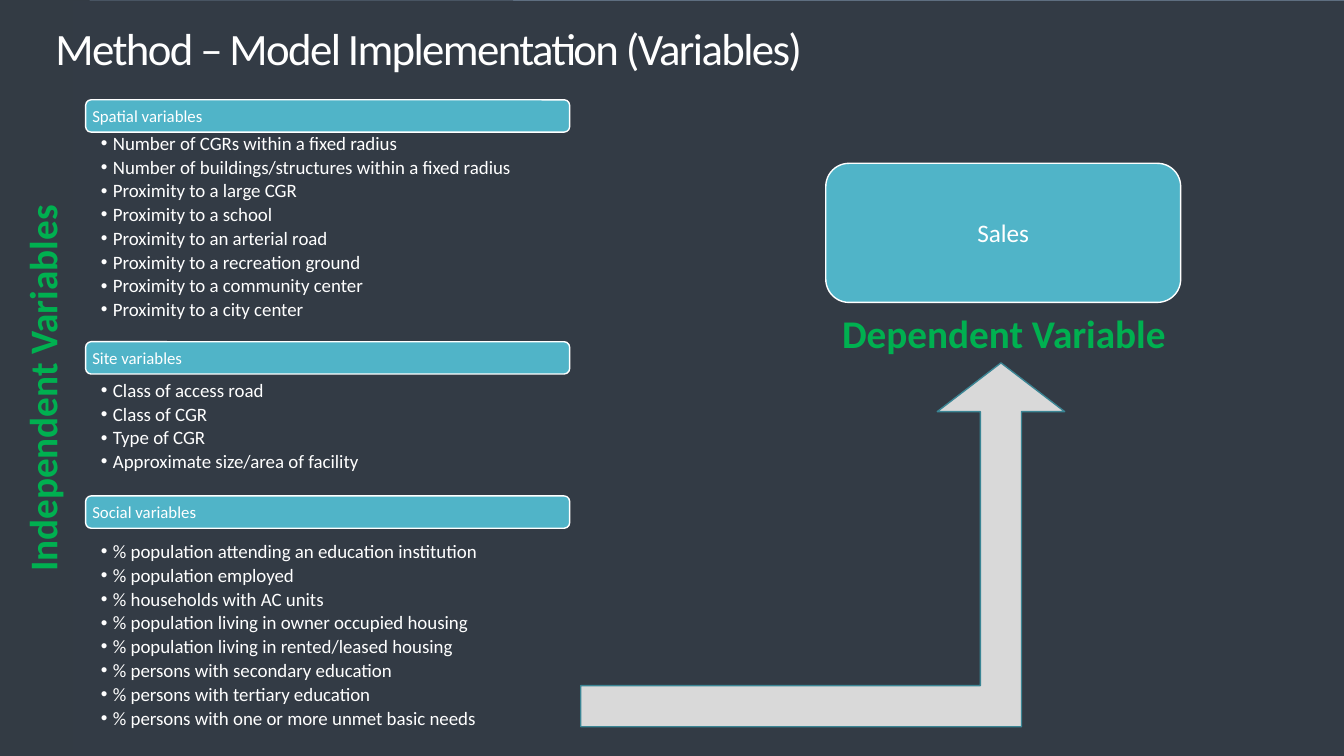
from lxml import etree
from pptx import Presentation
from pptx.dml.color import RGBColor
from pptx.enum import shapes, text
from pptx.oxml.ns import qn
from pptx.util import Inches, Pt

COLORS = {
    "base": "454545", "slate": "657689", "steel": "4C5867",
    "edge": "333B44", "panel": "333B45", "teal": "50B4C8",
    "teal_dark": "3B8594", "green": "00B050", "gray": "D9D9D9", "white": "FFFFFF",
}


def add_box(kind, box, fill, line=None):
    shape = slide.shapes.add_shape(kind, *map(Inches, box))
    shape.shadow.inherit = False
    shape.fill.solid()
    shape.fill.fore_color.rgb = RGBColor.from_string(COLORS[fill])
    if line:
        shape.line.color.rgb = RGBColor.from_string(COLORS[line])
        shape.line.width = Pt(1)
    else:
        shape.line.fill.background()
    return shape


def add_run(paragraph, words, size, color="white", bold=False):
    run = paragraph.add_run()
    run.text = words
    run.font.name = "Calibri"
    run.font.size = Pt(size)
    run.font.bold = bold
    run.font.color.rgb = RGBColor.from_string(COLORS[color])
    return run


prs = Presentation()
prs.slide_width, prs.slide_height = Inches(13.33), Inches(7.5)
slide = prs.slides.add_slide(prs.slide_layouts[4])
title, *lists, spare = slide.placeholders
spare.element.getparent().remove(spare.element)

# Backdrop: overlapping panels, kept behind the placeholders
slide.background.fill.solid()
slide.background.fill.fore_color.rgb = RGBColor.from_string(COLORS["base"])
panels = [
    ((0, 0, 13.33, 7.5), "slate"),
    ((0, 0, 5.09, 7.5), "steel"),
    ((0, 0, 0.89, 7.5), "edge"),
    ((0.72, 0.01, 12.61, 7.49), "panel"),
]
for box, fill in panels:
    panel = add_box(shapes.MSO_SHAPE.RECTANGLE, box, fill)
    title.element.addprevious(panel.element)

# Title
title.left, title.top, title.width, title.height = map(Inches, (0.45, -0.06, 12.17, 1.17))
title.text_frame.vertical_anchor = text.MSO_ANCHOR.MIDDLE
title.text_frame.auto_size = text.MSO_AUTO_SIZE.NONE
heading = title.text_frame.paragraphs[0]
heading.alignment = text.PP_ALIGN.LEFT
heading.line_spacing = 0.8
heading_run = add_run(heading, "Method – Model Implementation (Variables)", 32)
heading_run.font._element.set("spc", "-120")

# Independent variables: header bar top, list top, header, items
groups = [
    (0.99, 1.31, "Spatial variables", [
        "Number of CGRs within a fixed radius",
        "Number of buildings/structures within a fixed radius",
        "Proximity to a large CGR",
        "Proximity to a school",
        "Proximity to an arterial road",
        "Proximity to a recreation ground",
        "Proximity to a community center",
        "Proximity to a city center",
    ]),
    (3.39, 3.76, "Site variables", [
        "Class of access road",
        "Class of CGR",
        "Type of CGR",
        "Approximate size/area of facility",
    ]),
    (4.92, 5.36, "Social variables", [
        "% population attending an education institution",
        "% population employed",
        "% households with AC units",
        "% population living in owner occupied housing",
        "% population living in rented/leased housing",
        "% persons with secondary education",
        "% persons with tertiary education",
        "% persons with one or more unmet basic needs",
    ]),
]
for body, (bar_top, list_top, header, items) in zip(lists, groups):
    bar = add_box(shapes.MSO_SHAPE.ROUNDED_RECTANGLE, (0.85, bar_top, 4.8, 0.32), "teal", "white")
    label = bar.text_frame
    label.margin_left = label.margin_right = Inches(0.05)
    label.margin_top = label.margin_bottom = 0
    label.vertical_anchor = text.MSO_ANCHOR.MIDDLE
    label.paragraphs[0].alignment = text.PP_ALIGN.LEFT
    add_run(label.paragraphs[0], header, 12)

    body.left, body.top = Inches(0.85), Inches(list_top)
    body.width, body.height = Inches(4.8), Inches(0.24 * len(items))
    frame = body.text_frame
    frame.auto_size = text.MSO_AUTO_SIZE.NONE
    frame.vertical_anchor = text.MSO_ANCHOR.TOP
    frame.margin_left, frame.margin_right = Inches(0.15), Inches(0.11)
    frame.margin_top = frame.margin_bottom = Inches(0.02)
    for number, item in enumerate(items):
        entry = frame.add_paragraph() if number else frame.paragraphs[0]
        entry.line_spacing = 0.9
        entry.space_before, entry.space_after = Pt(0), Pt(2.4)
        props = entry._p.get_or_add_pPr()
        props.set("marL", str(Inches(0.12)))
        props.set("indent", str(Inches(-0.12)))
        etree.SubElement(props, qn("a:buFont"), typeface="Arial")
        etree.SubElement(props, qn("a:buChar"), char="•")
        add_run(entry, item, 13.5)

# Green captions
captions = [
    ("Independent Variables", -1.86, 3.57, 270),
    ("Dependent Variable", 7.68, 3.02, 0),
]
for words, left, top, angle in captions:
    caption = slide.shapes.add_textbox(Inches(left), Inches(top), Inches(4.55), Inches(0.57))
    caption.rotation = angle
    caption.text_frame.word_wrap = True
    caption.text_frame.paragraphs[0].alignment = text.PP_ALIGN.CENTER
    add_run(caption.text_frame.paragraphs[0], words, 28, "green", True)

# Dependent variable and the arrow leading to it
sales = add_box(shapes.MSO_SHAPE.ROUNDED_RECTANGLE, (8.19, 1.62, 3.52, 1.38), "teal", "white")
sales.text_frame.vertical_anchor = text.MSO_ANCHOR.MIDDLE
sales.text_frame.paragraphs[0].alignment = text.PP_ALIGN.CENTER
add_run(sales.text_frame.paragraphs[0], "Sales", 18)

arrow = add_box(shapes.MSO_SHAPE.BENT_UP_ARROW, (5.76, 3.6, 4.8, 3.61), "gray", "teal_dark")
for index, ratio in enumerate((0.113, 0.175, 0.134)):
    arrow.adjustments[index] = ratio

prs.save("out.pptx")
